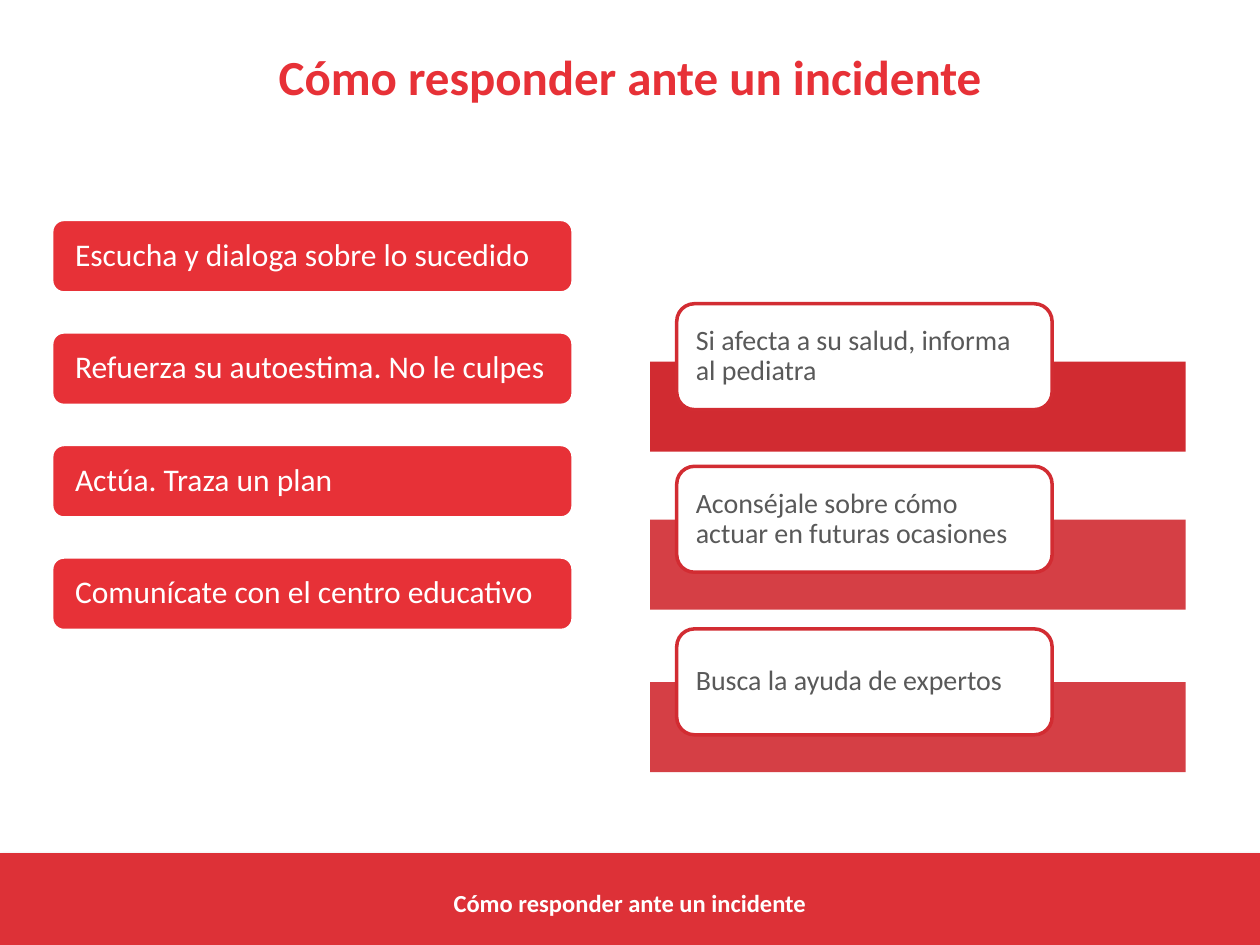
from lxml import etree
from pptx import Presentation
from pptx.dml.color import RGBColor
from pptx.enum.shapes import MSO_SHAPE
from pptx.enum.text import MSO_ANCHOR, PP_ALIGN
from pptx.oxml.ns import qn
from pptx.util import Pt

RECT, ROUND = MSO_SHAPE.RECTANGLE, MSO_SHAPE.ROUNDED_RECTANGLE
TOP, MIDDLE = MSO_ANCHOR.TOP, MSO_ANCHOR.MIDDLE
LEFT, CENTER = PP_ALIGN.LEFT, PP_ALIGN.CENTER

RED = RGBColor(0xE7, 0x31, 0x37)
BAND = RGBColor(0xDD, 0x31, 0x37)
DARK = RGBColor(0xD1, 0x2B, 0x31)
EDGE = RGBColor(0xD2, 0x2C, 0x32)
GRAY = RGBColor(0x59, 0x59, 0x59)
WHITE = RGBColor(0xFF, 0xFF, 0xFF)

TITLE = "Cómo responder ante un incidente"
STEPS = [
    "Escucha y dialoga sobre lo sucedido",
    "Refuerza su autoestima. No le culpes",
    "Actúa. Traza un plan",
    "Comunícate con el centro educativo",
]
CARDS = [
    ("Si afecta a su salud, informa al pediatra", 33, 100),
    ("Aconséjale sobre cómo actuar en futuras ocasiones", 30.4, 90),
    ("Busca la ayuda de expertos", 30.4, 90),
]


class Deck:
    face = "Calibri"

    def __init__(self, slide):
        self.slide = slide

    def block(self, kind, box, fill, line=None, alpha=100):
        shape = self.slide.shapes.add_shape(kind, *map(Pt, box))
        shape.shadow.inherit = False
        shape.fill.solid()
        shape.fill.fore_color.rgb = fill
        if line is None:
            shape.line.fill.background()
        else:
            shape.line.color.rgb = line
            shape.line.width = Pt(2)
        if alpha < 100:
            tint = shape.element.spPr.find(".//" + qn("a:srgbClr"))
            etree.SubElement(tint, qn("a:alpha"), val=str(alpha * 1000))
        return shape

    def shade(self, shape, blur, dist, alpha):
        fx = shape.element.spPr.find(qn("a:effectLst"))
        size = {"blurRad": Pt(blur), "dist": Pt(dist), "dir": 90 * 60000}
        cast = etree.SubElement(fx, qn("a:outerShdw"), rotWithShape="0",
                                **{k: str(int(v)) for k, v in size.items()})
        tint = etree.SubElement(cast, qn("a:srgbClr"), val="000000")
        etree.SubElement(tint, qn("a:alpha"), val=str(alpha * 1000))

    def put(self, shape, text, size, color, side=7.2, edge=0, bold=False,
            align=LEFT, anchor=MIDDLE, space=0.9):
        frame = shape.text_frame
        para = frame.paragraphs[0]
        para.text = text
        font = para.runs[0].font
        form = [
            (frame, {"word_wrap": True, "vertical_anchor": anchor,
                     "margin_left": Pt(side), "margin_right": Pt(side),
                     "margin_top": Pt(edge), "margin_bottom": Pt(edge)}),
            (para, {"alignment": align, "line_spacing": space}),
            (font, {"name": self.face, "size": Pt(size), "bold": bold}),
            (font.color, {"rgb": color}),
        ]
        for item, vals in form:
            for key, val in vals.items():
                setattr(item, key, val)

    def label(self, box, text, size, color):
        shape = self.slide.shapes.add_textbox(*map(Pt, box))
        self.put(shape, text, size, color, edge=3.6, bold=True,
                 align=CENTER, anchor=TOP, space=1.0)

    def step(self, top, text):
        shape = self.block(ROUND, (29.5, top, 298, 42), RED, WHITE)
        self.put(shape, text, 18, WHITE, side=11.3)

    def card(self, top, text, drop, alpha):
        self.block(RECT, (371.5, top + drop, 306, 51.5), DARK, alpha=alpha)
        shape = self.block(ROUND, (386.7, top, 214.5, 60.5), WHITE, EDGE)
        self.put(shape, text, 16, GRAY, side=8)


def main():
    prs = Presentation()
    prs.slide_width, prs.slide_height = Pt(720), Pt(540)
    deck = Deck(prs.slides.add_slide(prs.slide_layouts[6]))
    band = deck.block(RECT, (0, 487.5, 720, 54.5), BAND)
    deck.shade(band, 3.1, 1.8, 35)
    deck.label((36, 23, 648, 52), TITLE, 28, RED)
    for i, text in enumerate(STEPS):
        deck.step(125.4 + 64.3 * i, text)
    deck.label((36, 504, 648, 22), TITLE, 14, WHITE)
    for i, (text, drop, alpha) in enumerate(CARDS):
        deck.card(173.6 + 92.9 * i, text, drop, alpha)
    prs.save("out.pptx")


if __name__ == "__main__":
    main()
